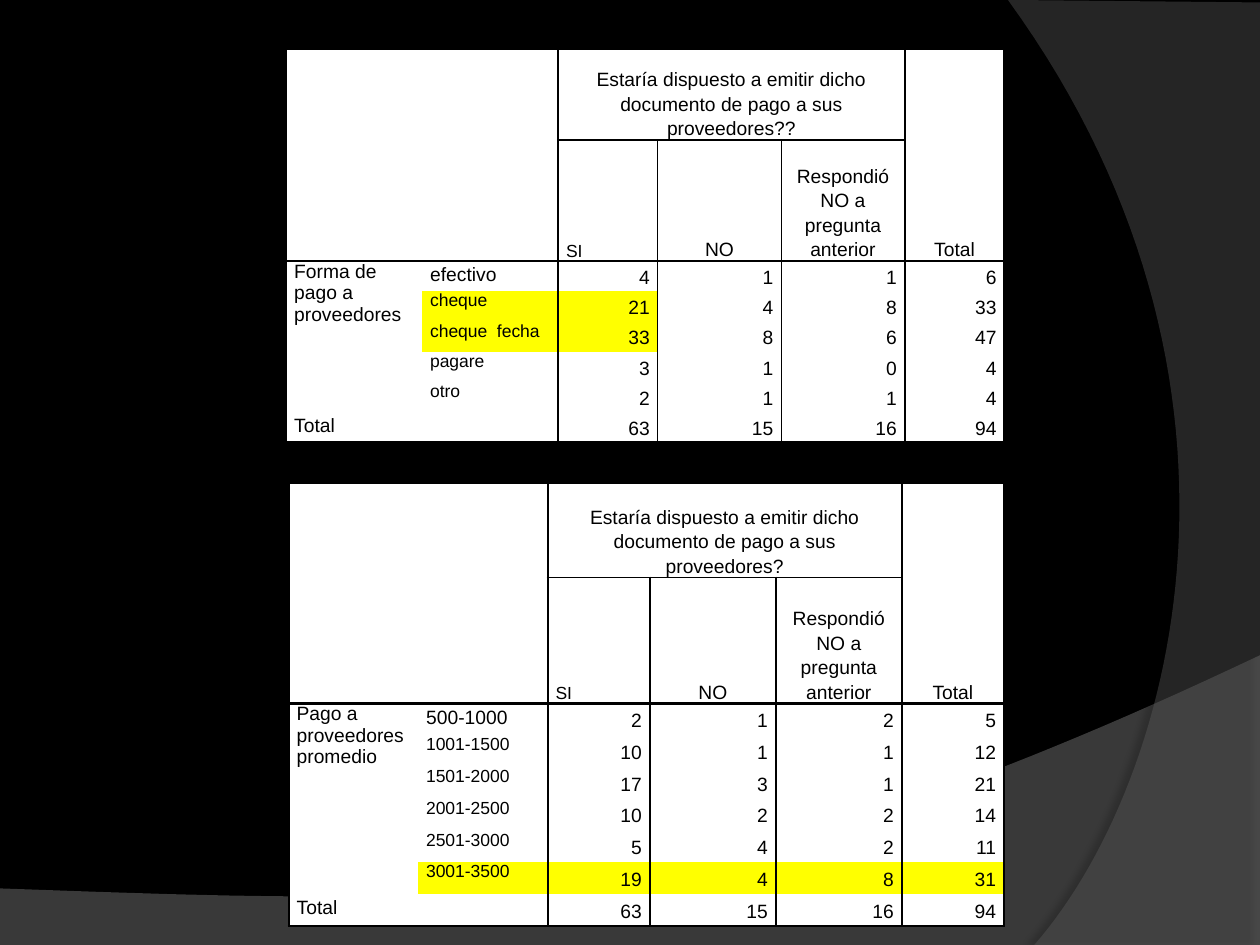
from lxml.etree import SubElement
from pptx import Presentation
from pptx.dml.color import RGBColor
from pptx.enum.text import MSO_ANCHOR, PP_ALIGN
from pptx.oxml.ns import qn
from pptx.util import Cm, Pt

COLORS = {
    "black": "000000",
    "white": "FFFFFF",
    "highlight": "FFFF00",
    "lower_wave": "7F7F7F",
    "right_wave": "5E5E5E",
}
VERTICAL_RULES = {0: 1.5, 2: 1.5, 3: 1, 4: 1, 5: 1, 6: 1.5}
ANSWERS = ["SI", "NO", "Respondió NO a pregunta anterior"]

PAYMENT_FORMS = [
    ("efectivo", 4, 1, 1, 6),
    ("cheque", 21, 4, 8, 33),
    ("cheque  fecha", 33, 8, 6, 47),
    ("pagare", 3, 1, 0, 4),
    ("otro", 2, 1, 1, 4),
]
PAYMENT_RANGES = [
    ("500-1000", 2, 1, 2, 5),
    ("1001-1500", 10, 1, 1, 12),
    ("1501-2000", 17, 3, 1, 21),
    ("2001-2500", 10, 2, 2, 14),
    ("2501-3000", 5, 4, 2, 11),
    ("3001-3500", 19, 4, 8, 31),
]


def rgb(name):
    """Return the named colour."""
    return RGBColor.from_string(COLORS[name])


def curve(start, control_1, control_2, end, steps=60):
    """Return points along a cubic curve, without its start."""
    points = []
    for step in range(1, steps + 1):
        t = step / steps
        weights = ((1 - t) ** 3, 3 * t * (1 - t) ** 2, 3 * t * t * (1 - t), t ** 3)
        corners = (start, control_1, control_2, end)
        points.append(tuple(sum(w * c[axis] for w, c in zip(weights, corners))
                            for axis in (0, 1)))
    return points


def add_wave(page, points, color, opacity, shadow_opacity, distance, direction):
    """Draw a translucent outline, with points in centimetres, and its shadow."""
    vertices = [(Cm(x), Cm(y)) for x, y in points]
    builder = page.shapes.build_freeform(*vertices[0])
    builder.add_line_segments(vertices[1:], close=True)
    wave = builder.convert_to_shape()
    wave.shadow.inherit = False
    wave.line.fill.background()
    wave.fill.solid()
    wave.fill.fore_color.rgb = rgb(color)
    properties = wave.element.spPr
    fill_color = properties.find(qn("a:solidFill")).find(qn("a:srgbClr"))
    SubElement(fill_color, qn("a:alpha"), val=str(opacity * 1000))
    shadow = SubElement(properties.find(qn("a:effectLst")), qn("a:outerShdw"),
                        blurRad=str(Pt(4)), dist=str(Pt(distance)),
                        dir=str(direction * 60000), rotWithShape="0")
    shadow_color = SubElement(shadow, qn("a:srgbClr"), val=COLORS["black"])
    SubElement(shadow_color, qn("a:alpha"), val=str(shadow_opacity * 1000))


def set_border(cell, side, weight):
    """Rule one side of a cell, or clear it when there is no weight."""
    line = SubElement(cell._tc.get_or_add_tcPr(), qn("a:ln" + side))
    if weight is None:
        SubElement(line, qn("a:noFill"))
        return
    line.set("w", str(Pt(weight)))
    fill = SubElement(line, qn("a:solidFill"))
    SubElement(fill, qn("a:srgbClr"), val=COLORS["black"])


def write(cell, text, size=11, align=PP_ALIGN.LEFT, anchor=MSO_ANCHOR.TOP, spacing=1.15):
    """Put formatted text in a cell."""
    cell.vertical_anchor = anchor
    para = cell.text_frame.paragraphs[0]
    para.alignment = align
    para.line_spacing = spacing
    span = para.add_run()
    span.text = text
    span.font.size = Pt(size)
    span.font.name = "Arial"
    span.font.color.rgb = rgb("black")


def style_cells(table, highlighted):
    """Set the margins, rules and fill of every visible cell."""
    row_count = len(table.rows)
    horizontal_rules = {0: 1.5, 1: 1, 2: 1.5, row_count: 1.5}
    for row in range(row_count):
        for column in range(len(table.columns)):
            cell = table.cell(row, column)
            if cell.is_spanned:
                continue
            bottom, right = row + 1, column + 1
            if cell.is_merge_origin:
                bottom, right = row + cell.span_height, column + cell.span_width
            cell.margin_left = cell.margin_right = Cm(0.16)
            cell.margin_top = cell.margin_bottom = 0
            set_border(cell, "L", VERTICAL_RULES.get(column))
            set_border(cell, "R", VERTICAL_RULES.get(right))
            set_border(cell, "T", horizontal_rules.get(row))
            set_border(cell, "B", horizontal_rules.get(bottom))
            cell.fill.solid()
            name = "highlight" if (row, column) in highlighted else "white"
            cell.fill.fore_color.rgb = rgb(name)


def write_header(table, question):
    """Fill the two heading rows."""
    heading = {"align": PP_ALIGN.CENTER, "anchor": MSO_ANCHOR.BOTTOM}
    write(table.cell(0, 2), question, **heading)
    write(table.cell(0, 5), "Total", **heading)
    write(table.cell(1, 2), ANSWERS[0], size=10, anchor=MSO_ANCHOR.BOTTOM, spacing=1)
    for column, answer in enumerate(ANSWERS[1:], 3):
        write(table.cell(1, column), answer, **heading)


def write_body(table, title, records):
    """Fill the category rows and the row of column totals."""
    last = len(records) + 2
    write(table.cell(2, 0), title, spacing=1)
    write(table.cell(last, 0), "Total")
    totals = [sum(column) for column in zip(*(record[1:] for record in records))]
    for row, (label, *values) in enumerate([*records, ("", *totals)], 2):
        if row == 2:
            write(table.cell(row, 1), label)
        elif row < last:
            write(table.cell(row, 1), label, size=10, spacing=1)
        for column, value in enumerate(values, 2):
            write(table.cell(row, column), str(value),
                  align=PP_ALIGN.RIGHT, anchor=MSO_ANCHOR.MIDDLE)


def add_crosstab(page, left, top, widths, heights, question, title, records, highlighted):
    """Add a cross table; heights are for question, answers and each body row."""
    row_heights = [*heights[:2], *[heights[2]] * (len(records) + 1)]
    frame = page.shapes.add_table(len(row_heights), len(widths), Cm(left), Cm(top),
                                  Cm(sum(widths)), Cm(sum(row_heights)))
    table = frame.table
    table.first_row = table.horz_banding = False
    for column, width in zip(table.columns, widths):
        column.width = Cm(width)
    for row, height in zip(table.rows, row_heights):
        row.height = Cm(height)
    last = len(records) + 2
    for start, end in [((0, 0), (1, 1)), ((0, 2), (0, 4)), ((0, 5), (1, 5)),
                       ((2, 0), (last - 1, 0)), ((last, 0), (last, 1))]:
        table.cell(*start).merge(table.cell(*end))
    style_cells(table, highlighted)
    write_header(table, question)
    write_body(table, title, records)


def main():
    """Build the slide and save it."""
    deck = Presentation()
    deck.slide_width, deck.slide_height = Cm(25.4), Cm(19.05)
    page = deck.slides.add_slide(deck.slide_layouts[6])
    page.background.fill.solid()
    page.background.fill.fore_color.rgb = rgb("black")

    lower = [(0, 17.91), (0, 19.07), (25.4, 19.07), (25.4, 13.21)]
    lower += curve(lower[-1], (14.2, 18.52), (9.93, 18.26), lower[0])
    add_wave(page, lower, "lower_wave", 45, 35, 3.5, 270)
    right = [(25.4, 0.05), (25.4, 19.05), (20.85, 19.05)]
    right += curve(right[-1], (23.75, 15.72), (25.86, 7.62), (20.32, 0))
    add_wave(page, right, "right_wave", 40, 45, 4, 180)

    question = "Estaría dispuesto a emitir dicho documento de pago a sus proveedores?"
    add_crosstab(page, 5.77, 0.99, [2.74, 2.74, 2.01, 2.49, 2.49, 2.01],
                 [1.83, 2.44, 0.61], question + "?", "Forma de pago a proveedores",
                 PAYMENT_FORMS, {(row, column) for row in (3, 4) for column in (1, 2)})
    add_crosstab(page, 5.82, 9.73, [2.61, 2.61, 2.06, 2.54, 2.54, 2.06],
                 [1.91, 2.54, 0.64], question, "Pago a proveedores promedio",
                 PAYMENT_RANGES, {(7, column) for column in range(1, 6)})
    deck.save("out.pptx")


if __name__ == "__main__":
    main()
